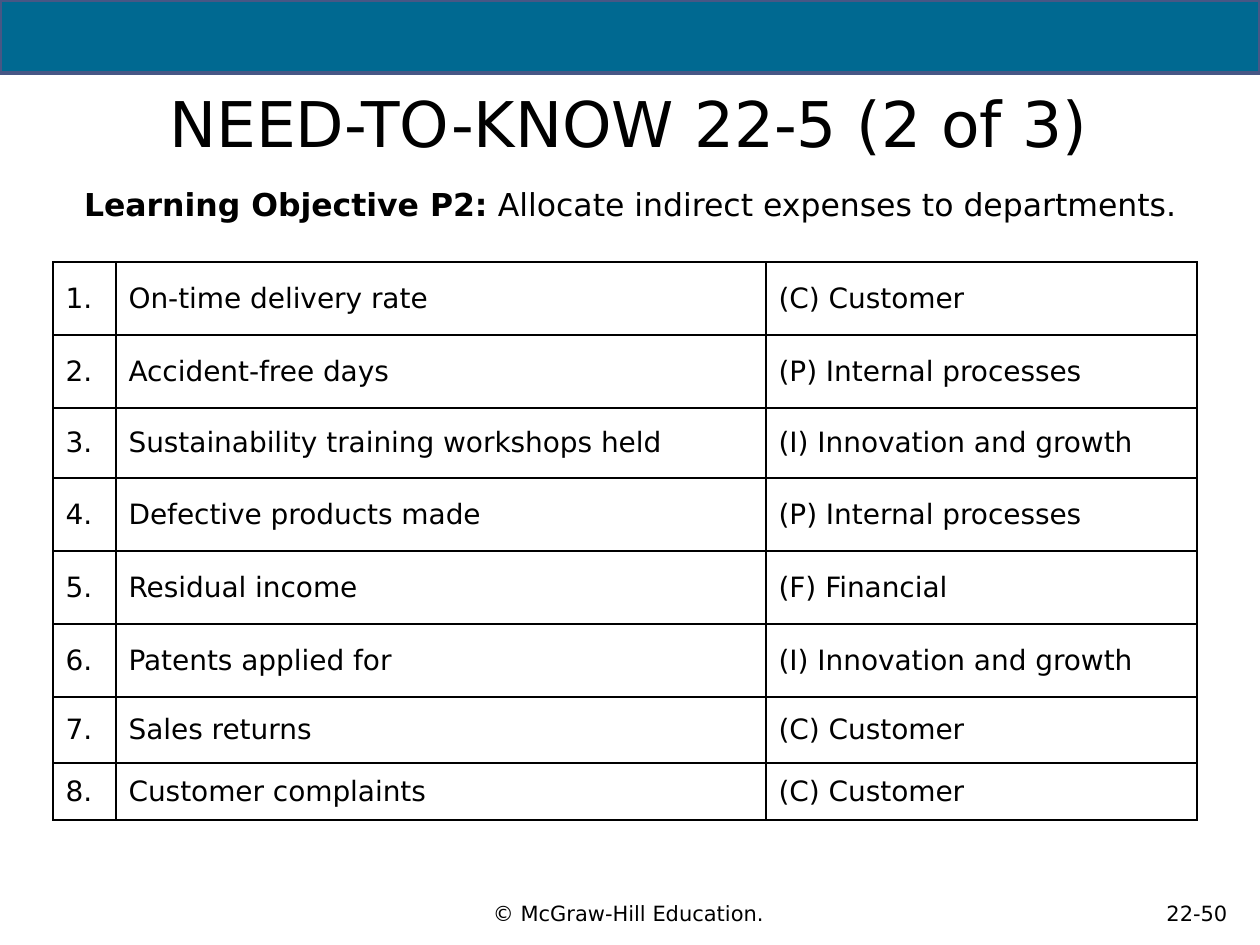
from dataclasses import dataclass
from typing import NamedTuple

from lxml.etree import SubElement
from pptx import Presentation
from pptx.dml.color import RGBColor
from pptx.enum.shapes import MSO_SHAPE
from pptx.enum.text import MSO_ANCHOR, PP_ALIGN
from pptx.oxml.ns import qn
from pptx.util import Emu, Pt

EMU_PER_PX = 914400 / 126


@dataclass(frozen=True)
class Theme:
    font: str = "DejaVu Sans"
    ink: str = "000000"
    banner: str = "006991"
    banner_line: str = "475785"
    paper: str = "FFFFFF"
    title_size: int = 36
    objective_size: int = 18
    table_size: int = 16
    footer_size: int = 12
    banner_line_width: float = 2.25
    border_width: int = 1


class Box(NamedTuple):
    left: int
    top: int
    width: int
    height: int


class Span(NamedTuple):
    text: str
    bold: bool = False


class Measure(NamedTuple):
    name: str
    perspective: str


class TextBlock(NamedTuple):
    box: Box
    spans: list[Span]
    size: int
    anchor: MSO_ANCHOR = MSO_ANCHOR.MIDDLE


THEME = Theme()
SLIDE_WIDTH, SLIDE_HEIGHT = 1260, 945
BANNER = Box(0, 0, SLIDE_WIDTH, 73)
TITLE = TextBlock(Box(38, 74, 1181, 96), [Span("NEED-TO-KNOW 22-5 (2 of 3)")],
                  THEME.title_size)
TEXT_BLOCKS = [
    TextBlock(Box(32, 179, 1197, 58),
              [Span("Learning Objective P2:", bold=True),
               Span(" Allocate indirect expenses to departments.")],
              THEME.objective_size, MSO_ANCHOR.TOP),
    TextBlock(Box(118, 882, 1021, 63), [Span("© McGraw-Hill Education.")],
              THEME.footer_size),
    TextBlock(Box(1134, 882, 126, 63), [Span("22-50")], THEME.footer_size),
]

CUSTOMER = "(C) Customer"
PROCESSES = "(P) Internal processes"
GROWTH = "(I) Innovation and growth"
FINANCIAL = "(F) Financial"
MEASURES = [
    Measure("On-time delivery rate", CUSTOMER),
    Measure("Accident-free days", PROCESSES),
    Measure("Sustainability training workshops held", GROWTH),
    Measure("Defective products made", PROCESSES),
    Measure("Residual income", FINANCIAL),
    Measure("Patents applied for", GROWTH),
    Measure("Sales returns", CUSTOMER),
    Measure("Customer complaints", CUSTOMER),
]
TABLE_LEFT, TABLE_TOP = 53, 262
COLUMN_WIDTHS = [63, 650, 431]
ROW_HEIGHTS = [73, 73, 70, 73, 73, 73, 66, 57]


def px(length: int) -> Emu:
    return Emu(round(length * EMU_PER_PX))


def scaled(box: Box) -> list[Emu]:
    return [px(length) for length in box]


def write(para, spans: list[Span], size: int, align: PP_ALIGN) -> None:
    para.alignment = align
    for span in spans:
        run = para.add_run()
        run.text = span.text
        run.font.name = THEME.font
        run.font.size = Pt(size)
        run.font.bold = span.bold
        run.font.color.rgb = RGBColor.from_string(THEME.ink)


def fill_text_shape(shape, block: TextBlock) -> None:
    shape.left, shape.top, shape.width, shape.height = scaled(block.box)
    frame = shape.text_frame
    frame.word_wrap = True
    frame.vertical_anchor = block.anchor
    write(frame.paragraphs[0], block.spans, block.size, PP_ALIGN.CENTER)


def add_banner(slide) -> None:
    banner = slide.shapes.add_shape(MSO_SHAPE.RECTANGLE, *scaled(BANNER))
    banner.shadow.inherit = False
    banner.fill.solid()
    banner.fill.fore_color.rgb = RGBColor.from_string(THEME.banner)
    banner.line.color.rgb = RGBColor.from_string(THEME.banner_line)
    banner.line.width = Pt(THEME.banner_line_width)


def add_borders(cell) -> None:
    properties = cell._tc.get_or_add_tcPr()
    for side in ("a:lnL", "a:lnR", "a:lnT", "a:lnB"):
        line = SubElement(properties, qn(side), w=str(Pt(THEME.border_width)))
        fill = SubElement(line, qn("a:solidFill"))
        SubElement(fill, qn("a:srgbClr"), val=THEME.ink)


def add_measure_table(slide) -> None:
    box = Box(TABLE_LEFT, TABLE_TOP, sum(COLUMN_WIDTHS), sum(ROW_HEIGHTS))
    table = slide.shapes.add_table(len(MEASURES), len(COLUMN_WIDTHS), *scaled(box)).table
    table.first_row = table.horz_banding = False
    for column, width in zip(table.columns, COLUMN_WIDTHS):
        column.width = px(width)
    for number, (row, height, measure) in enumerate(
            zip(table.rows, ROW_HEIGHTS, MEASURES), start=1):
        row.height = px(height)
        for cell, text in zip(row.cells, (f"{number}.", *measure)):
            add_borders(cell)
            cell.fill.solid()
            cell.fill.fore_color.rgb = RGBColor.from_string(THEME.paper)
            cell.vertical_anchor = MSO_ANCHOR.MIDDLE
            write(cell.text_frame.paragraphs[0], [Span(text)],
                  THEME.table_size, PP_ALIGN.LEFT)


def main() -> None:
    deck = Presentation()
    deck.slide_width, deck.slide_height = px(SLIDE_WIDTH), px(SLIDE_HEIGHT)
    page = deck.slides.add_slide(deck.slide_layouts[5])
    add_banner(page)
    fill_text_shape(page.shapes.title, TITLE)
    for block in TEXT_BLOCKS:
        fill_text_shape(page.shapes.add_textbox(*scaled(block.box)), block)
    add_measure_table(page)
    deck.save("out.pptx")


if __name__ == "__main__":
    main()
